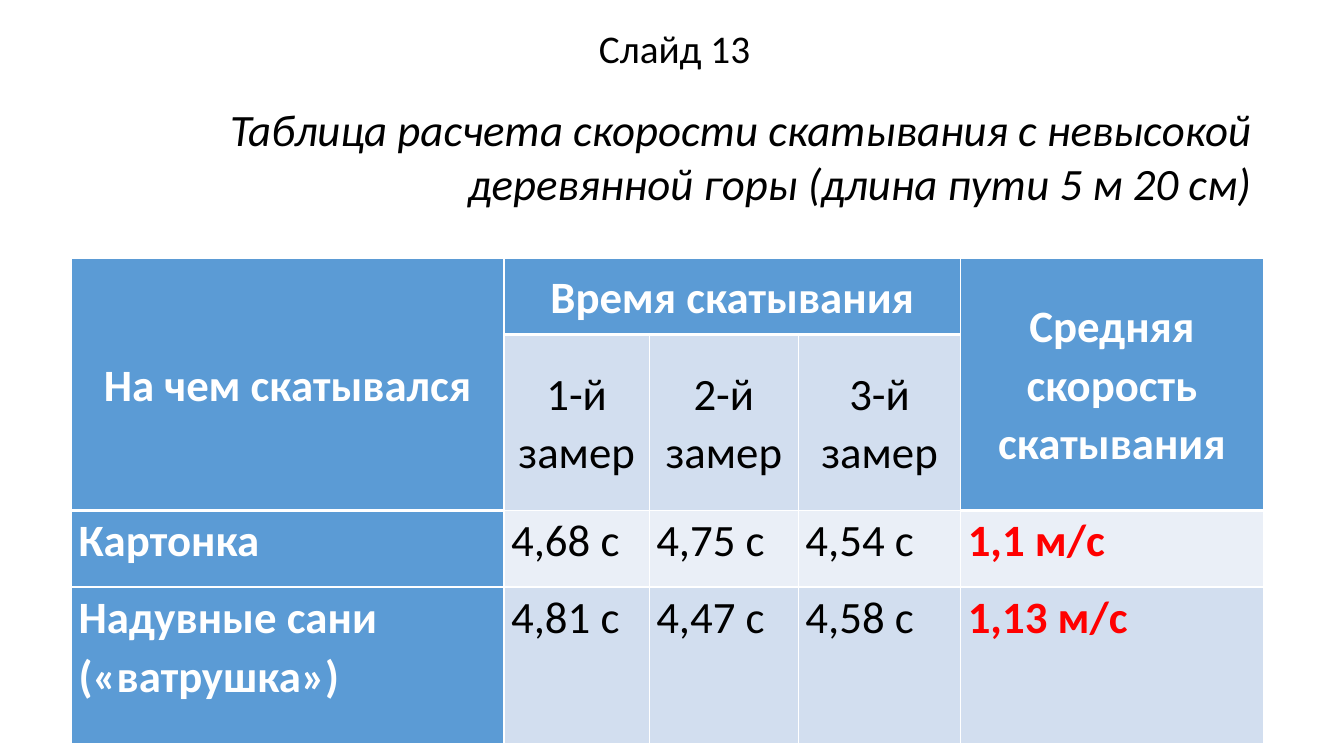
"""Build the slide with the table of sledging speeds."""
from dataclasses import dataclass

from lxml.etree import SubElement
from pptx import Presentation
from pptx.dml.color import RGBColor as Rgb
from pptx.enum.text import MSO_ANCHOR as Anchor, MSO_AUTO_SIZE as AutoSize, PP_ALIGN as Align
from pptx.oxml.ns import qn
from pptx.util import Inches, Pt


@dataclass(frozen=True)
class Theme:
    """Colours, font and type sizes of the slide."""
    font: str = "Calibri"
    body_size: int = 32
    label_size: int = 28
    white: str = "FFFFFF"
    black: str = "000000"
    red: str = "FF0000"
    header: str = "5B9BD5"
    dark_band: str = "D2DEEF"
    light_band: str = "EAEFF7"
    thin: float = 1
    thick: float = 3
    spacing: float = 1.07


@dataclass(frozen=True)
class Entry:
    """One visible table cell with its place, look and span."""
    row: int
    col: int
    text: str
    color: str
    bold: bool = False
    centered: bool = False
    rows: int = 1
    cols: int = 1


THEME = Theme()
COLUMN_WIDTHS = (4.29, 1.44, 1.48, 1.61, 3)
ROW_HEIGHTS = (0.76, 1.55, 0.76, 1.55)
LAST_COL = len(COLUMN_WIDTHS) - 1
RESULTS = (
    ("Картонка", "4,68 с", "4,75 с", "4,54 с", "1,1 м/с"),
    ("Надувные сани («ватрушка»)", "4,81 с", "4,47 с", "4,58 с", "1,13 м/с"),
)


def write(frame, text: str, *, size: int = THEME.body_size, color: str = THEME.black,
          bold: bool = False, italic: bool = False, align=Align.LEFT,
          spacing: float = 1.0) -> None:
    """Put one formatted paragraph into a text frame."""
    paragraph = frame.paragraphs[0]
    paragraph.alignment = align
    paragraph.line_spacing = spacing
    run = paragraph.add_run()
    run.text = text
    run.font.name = THEME.font
    run.font.size = Pt(size)
    run.font.color.rgb = Rgb.from_string(color)
    run.font.bold = bold
    run.font.italic = italic


def place(shape, left: float, top: float, width: float, height: float) -> None:
    """Position a text shape and give it a plain white ground."""
    shape.left, shape.top = Inches(left), Inches(top)
    shape.width, shape.height = Inches(width), Inches(height)
    shape.fill.solid()
    shape.fill.fore_color.rgb = Rgb.from_string(THEME.white)
    shape.text_frame.word_wrap = True
    shape.text_frame.auto_size = AutoSize.NONE


def closes_header(row: int, col: int) -> bool:
    """Tell whether a heavy rule runs below this cell."""
    return row == 0 or (row == 1 and col in (0, LAST_COL))


def ground(row: int, col: int) -> str:
    """Return the fill colour for a place in the table."""
    if row == 0 or col == 0 or (row == 1 and col == LAST_COL):
        return THEME.header
    return THEME.light_band if row == 2 else THEME.dark_band


def style_cell(cell, row: int, col: int) -> None:
    """Set the borders, fill and margins of one cell."""
    top = THEME.thick if row and closes_header(row - 1, col) else THEME.thin
    bottom = THEME.thick if closes_header(row, col) else THEME.thin
    properties = cell._tc.get_or_add_tcPr()
    for side, width in (("L", THEME.thin), ("R", THEME.thin), ("T", top), ("B", bottom)):
        line = SubElement(properties, qn(f"a:ln{side}"), w=str(Pt(width)))
        SubElement(SubElement(line, qn("a:solidFill")), qn("a:srgbClr"), val=THEME.white)
    cell.fill.solid()
    cell.fill.fore_color.rgb = Rgb.from_string(ground(row, col))
    cell.margin_left = cell.margin_right = Inches(0.07)
    cell.margin_top = cell.margin_bottom = Inches(0)


def table_entries() -> list[Entry]:
    """List the header cells and the measured results."""
    entries = [
        Entry(0, 0, "На чем скатывался", THEME.white, True, True, rows=2),
        Entry(0, 1, "Время скатывания", THEME.white, True, True, cols=3),
        Entry(0, LAST_COL, "Средняя скорость скатывания", THEME.white, True, True, rows=2),
    ]
    entries += [Entry(1, trial, f"{trial}-й замер", THEME.black, centered=True)
                for trial in range(1, LAST_COL)]
    colors = {0: THEME.white, LAST_COL: THEME.red}
    entries += [Entry(row, col, text, colors.get(col, THEME.black), col in colors)
                for row, result in enumerate(RESULTS, start=2)
                for col, text in enumerate(result)]
    return entries


def add_speed_table(slide) -> None:
    """Draw the table of times and mean speeds."""
    speeds = slide.shapes.add_table(
        len(ROW_HEIGHTS), len(COLUMN_WIDTHS), Inches(0.71), Inches(2.56),
        Inches(sum(COLUMN_WIDTHS)), Inches(sum(ROW_HEIGHTS))).table
    for column, width in zip(speeds.columns, COLUMN_WIDTHS):
        column.width = Inches(width)
    for row, height in enumerate(ROW_HEIGHTS):
        speeds.rows[row].height = Inches(height)
        for col in range(len(COLUMN_WIDTHS)):
            style_cell(speeds.cell(row, col), row, col)
    for entry in table_entries():
        cell = speeds.cell(entry.row, entry.col)
        if entry.rows > 1 or entry.cols > 1:
            cell.merge(speeds.cell(entry.row + entry.rows - 1, entry.col + entry.cols - 1))
        cell.vertical_anchor = Anchor.MIDDLE if entry.centered else Anchor.TOP
        write(cell.text_frame, entry.text, color=entry.color, bold=entry.bold,
              align=Align.CENTER if entry.centered else Align.LEFT, spacing=THEME.spacing)


def main() -> None:
    """Assemble and save the slide."""
    deck = Presentation()
    deck.slide_width, deck.slide_height = Inches(13.33), Inches(7.5)
    slide = deck.slides.add_slide(deck.slide_layouts[5])
    heading = slide.shapes.title
    place(heading, 0.71, 0.96, 11.81, 1.18)
    heading.text_frame.vertical_anchor = Anchor.TOP
    write(heading.text_frame,
          "Таблица расчета скорости скатывания с невысокой деревянной горы (длина пути 5 м 20 см)",
          italic=True, align=Align.RIGHT)
    add_speed_table(slide)
    slide_label = slide.shapes.add_textbox(0, 0, 0, 0)
    place(slide_label, 5.65, 0.19, 2.08, 0.57)
    write(slide_label.text_frame, "Слайд 13", size=THEME.label_size, align=Align.CENTER)
    deck.save("out.pptx")


if __name__ == "__main__":
    main()
